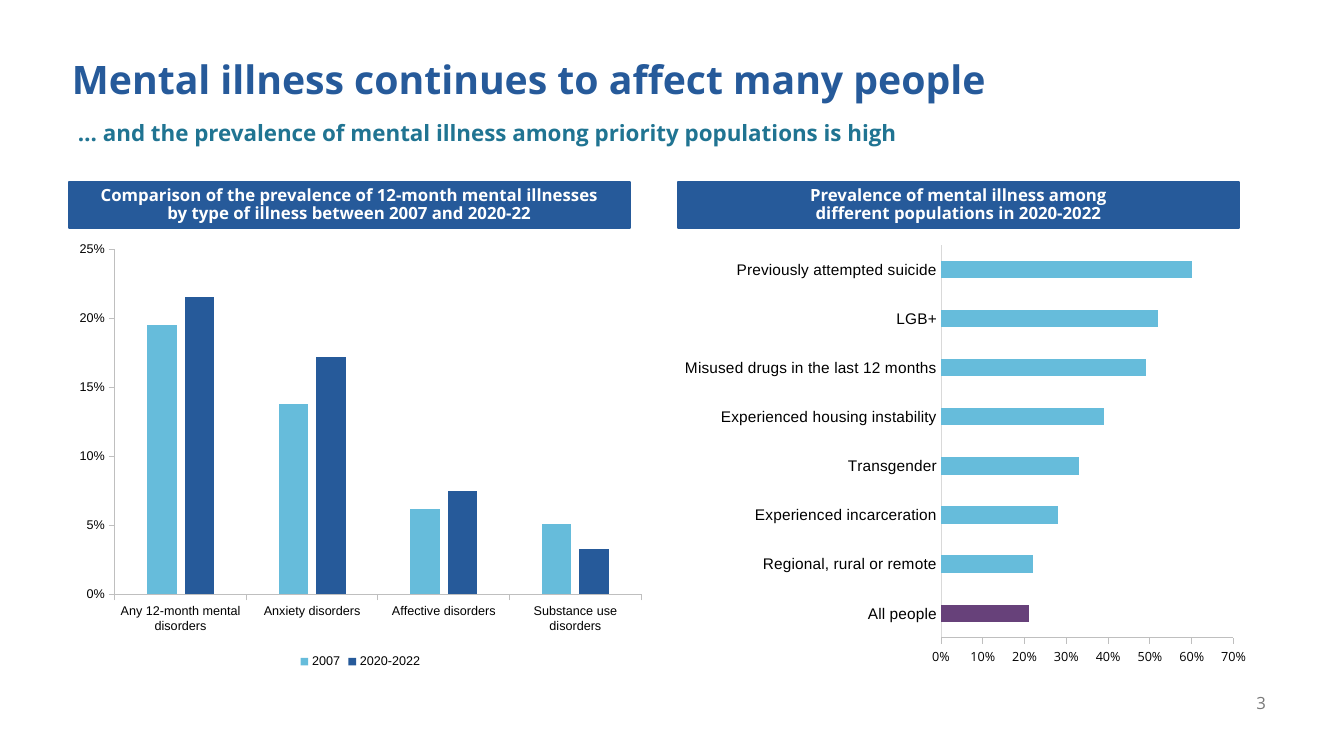
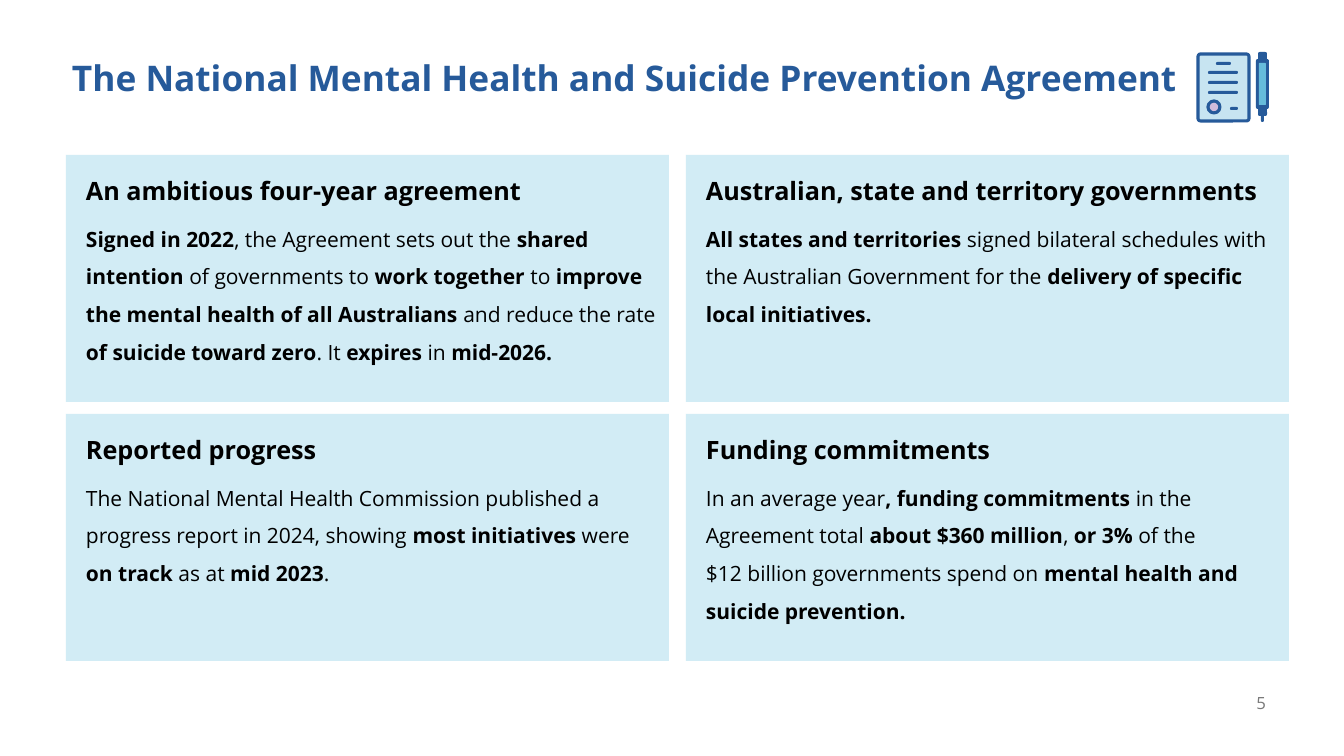
from pptx import Presentation
from pptx.chart.data import CategoryChartData
from pptx.dml.color import RGBColor
from pptx.enum.chart import XL_CHART_TYPE as ChartType, XL_LEGEND_POSITION as LegendPosition
from pptx.enum.chart import XL_TICK_MARK as TickMark
from pptx.enum.shapes import MSO_SHAPE as Preset
from pptx.enum.text import MSO_ANCHOR as Anchor, MSO_AUTO_SIZE as AutoSize, PP_ALIGN as Align
from pptx.oxml import parse_xml
from pptx.oxml.ns import nsdecls, qn
from pptx.util import Pt

EMU_PER_PX = 914400 / 100.8
FONT = "Open Sans"
CHART_FONT = "Arial"
BLUE = "265A9A"
TEAL = "207492"
SKY = "66BCDB"
PALE = "D2ECF5"
PURPLE = "67417A"
BLACK = "000000"
WHITE = "FFFFFF"
GREY = "797979"
AXIS_GREY = "BFBFBF"
PALE_GREY = "D9D9D9"
PAPER = "C7E4F1"
SEAL = "D0BBDB"
TITLE_BOX = (62, 56, 1222, 56)
SUBTITLE_BOX = (68, 117, 1222, 44)
NUMBER_BOX = (1199, 683, 77, 40)

CARDS = [
    ("An ambitious four-year agreement",
     "**Signed in 2022**, the Agreement sets out the **shared intention **of governments to "
     "**work together **to **improve the mental health of all Australians **and reduce the rate "
     "**of suicide toward zero**. It **expires** in **mid-2026.**"),
    ("Australian, state and territory governments",
     "**All states and territories **signed bilateral schedules with the Australian Government "
     "for the **delivery of specific local initiatives.**"),
    ("Reported progress",
     "The National Mental Health Commission published a progress report in 2024, showing "
     "**most initiatives **were **on track **as at **mid 2023**."),
    ("Funding commitments",
     "In an average year**, funding commitments **in the Agreement total **about $360 million**, "
     "**or 3% **of the\n$12 billion governments spend on "
     "**mental health and suicide prevention.**"),
]


def px(length):
    return round(length * EMU_PER_PX)


def color(value):
    return RGBColor.from_string(value)


def place(shape, box):
    shape.left, shape.top, shape.width, shape.height = map(px, box)


def style_font(font, size, fill, name=FONT, bold=False):
    font.name, font.size, font.bold = name, Pt(size), bold
    font.color.rgb = color(fill)


def write(paragraph, text, size=12, fill=BLACK, bold=False, align=Align.LEFT,
          line_spacing=None, space_after=0):
    paragraph.alignment = align
    paragraph.line_spacing = line_spacing
    paragraph.space_before = Pt(0)
    paragraph.space_after = Pt(space_after)
    for index, part in enumerate(text.split("**")):
        for line_index, line in enumerate(part.split("\n")):
            if line_index:
                paragraph.add_line_break()
            if line:
                run = paragraph.add_run()
                run.text = line
                style_font(run.font, size, fill, bold=bold or index % 2 == 1)


def set_frame(shape, anchor=Anchor.TOP, insets=(10, 5, 10, 5)):
    frame = shape.text_frame
    frame.word_wrap = True
    frame.auto_size = AutoSize.NONE
    frame.vertical_anchor = anchor
    frame.margin_left, frame.margin_top, frame.margin_right, frame.margin_bottom = map(px, insets)
    return frame


def add_block(shapes, box, fill, preset=Preset.RECTANGLE, line=None, line_width=1.5, radius=None):
    shape = shapes.add_shape(preset, *map(px, box))
    shape.shadow.inherit = False
    shape.fill.solid()
    shape.fill.fore_color.rgb = color(fill)
    if line:
        shape.line.color.rgb = color(line)
        shape.line.width = Pt(line_width)
    else:
        shape.line.fill.background()
    if radius is not None:
        shape.adjustments[0] = radius
    return shape


def fill_placeholder(placeholder, box, text, size, fill):
    place(placeholder, box)
    frame = set_frame(placeholder)
    write(frame.paragraphs[0], text, size=size, fill=fill, bold=True, line_spacing=0.9)


def start_slide(presentation, layout, title, title_size, number):
    slide = presentation.slides.add_slide(presentation.slide_layouts[layout])
    fill_placeholder(slide.shapes.title, TITLE_BOX, title, title_size, BLUE)
    number_box = slide.shapes.add_textbox(*map(px, NUMBER_BOX))
    frame = set_frame(number_box, Anchor.MIDDLE)
    write(frame.paragraphs[0], number, fill=GREY, align=Align.RIGHT)
    return slide


def add_band(slide, box, text):
    band = add_block(slide.shapes, box, BLUE, line=BLUE)
    frame = set_frame(band, Anchor.MIDDLE, (10, 0, 10, 0))
    write(frame.paragraphs[0], text, fill=WHITE, bold=True, align=Align.CENTER, line_spacing=0.9)


def style_axis(axis, size, name, line, tick):
    axis.has_major_gridlines = False
    axis.major_tick_mark = tick
    axis.minor_tick_mark = TickMark.NONE
    style_font(axis.tick_labels.font, size, BLACK, name)
    axis.format.line.color.rgb = color(line)
    axis.format.line.width = Pt(0.75)


def set_plot_area(chart, x, y, w, h):
    plot_area = chart.element.find(".//" + qn("c:plotArea"))
    layout = plot_area.find(qn("c:layout"))
    if layout is not None:
        plot_area.remove(layout)
    sizes = "".join(f'<c:{key} val="{value}"/>' for key, value in
                    (("x", x), ("y", y), ("w", w), ("h", h)))
    plot_area.insert(0, parse_xml(
        f'<c:layout {nsdecls("c")}><c:manualLayout><c:layoutTarget val="inner"/>'
        f'<c:xMode val="edge"/><c:yMode val="edge"/>{sizes}</c:manualLayout></c:layout>'))


def add_bar_chart(slide, box, kind, categories, series, maximum, step, gap, plot_box,
                  value_font=CHART_FONT, category_size=9, category_line=AXIS_GREY,
                  category_tick=TickMark.OUTSIDE):
    data = CategoryChartData(number_format="0%")
    data.categories = categories
    for name, values, _ in series:
        data.add_series(name, values)
    chart = slide.shapes.add_chart(kind, *map(px, box), data).chart
    style_font(chart.font, 9, BLACK, value_font)
    chart.has_title = False
    chart.has_legend = False
    style_axis(chart.category_axis, category_size, CHART_FONT, category_line, category_tick)
    value_axis = chart.value_axis
    style_axis(value_axis, 9, value_font, AXIS_GREY, TickMark.OUTSIDE)
    value_axis.minimum_scale, value_axis.maximum_scale, value_axis.major_unit = 0, maximum, step
    value_axis.tick_labels.number_format = "0%"
    value_axis.tick_labels.number_format_is_linked = False
    plot = chart.plots[0]
    plot.gap_width = gap
    plot.vary_by_categories = False
    for drawn, (_, _, fill) in zip(plot.series, series):
        drawn.format.fill.solid()
        drawn.format.fill.fore_color.rgb = color(fill)
    set_plot_area(chart, *plot_box)
    return chart


def add_illness_chart(slide, box):
    chart = add_bar_chart(
        slide, box, ChartType.COLUMN_CLUSTERED,
        ["Any 12-month mental disorders", "Anxiety disorders", "Affective disorders",
         "Substance use disorders"],
        [("2007", (0.195, 0.138, 0.062, 0.051), SKY),
         ("2020-2022", (0.215, 0.172, 0.075, 0.033), BLUE)],
        maximum=0.25, step=0.05, gap=219, plot_box=(0.08, 0.03, 0.9, 0.79))
    chart.plots[0].overlap = -27
    chart.has_legend = True
    chart.legend.position = LegendPosition.BOTTOM
    chart.legend.include_in_layout = False
    style_font(chart.legend.font, 9, BLACK, CHART_FONT)


def add_population_chart(slide, box):
    chart = add_bar_chart(
        slide, box, ChartType.BAR_CLUSTERED,
        ["All people", "Regional, rural or remote", "Experienced incarceration", "Transgender",
         "Experienced housing instability", "Misused drugs in the last 12 months", "LGB+",
         "Previously attempted suicide"],
        [("Series 1", (0.21, 0.22, 0.28, 0.33, 0.39, 0.49, 0.52, 0.6), SKY)],
        maximum=0.7, step=0.1, gap=182, plot_box=(0.46, 0.02, 0.5, 0.9),
        value_font=FONT, category_size=11, category_line=PALE_GREY, category_tick=TickMark.NONE)
    all_people = chart.plots[0].series[0].points[0].format.fill
    all_people.solid()
    all_people.fore_color.rgb = color(PURPLE)


def add_agreement_icon(slide, left, top):
    shapes = slide.shapes.add_group_shape().shapes

    def part(x, y, width, height, fill=BLUE, preset=Preset.ROUNDED_RECTANGLE, radius=0.5, **line):
        add_block(shapes, (left + x, top + y, width, height), fill, preset, radius=radius, **line)

    part(2, 2, 51, 67, PAPER, radius=0.05, line=BLUE, line_width=2.25)
    part(20, 10, 15, 3)
    for row in range(3):
        part(12, 19 + 10 * row, 30, 3)
    part(34, 55, 8, 3)
    part(12, 49, 12, 12, SEAL, Preset.OVAL, radius=None, line=BLUE, line_width=2.25)
    part(62, 0, 9, 11, radius=0.2)
    part(60, 7, 13, 50, radius=0.15)
    part(62, 53, 9, 11, radius=0.2)
    part(65, 60, 3, 10)
    part(63, 11, 7, 42, SKY, radius=0.1)


def add_card(slide, box, heading, body):
    card = add_block(slide.shapes, box, PALE)
    frame = set_frame(card, insets=(20, 20, 10, 5))
    write(frame.paragraphs[0], heading, size=18, bold=True, space_after=6)
    write(frame.add_paragraph(), body, size=15, line_spacing=Pt(26.9), space_after=16)


def build_prevalence_slide(presentation):
    slide = start_slide(presentation, 0, "Mental illness continues to affect many people", 28, "3")
    fill_placeholder(
        slide.placeholders[1], SUBTITLE_BOX,
        "… and the prevalence of mental illness among priority populations is high", 16, TEAL)
    add_population_chart(slide, (672, 236, 585, 437))
    add_illness_chart(slide, (68, 236, 585, 437))
    add_band(slide, (69, 182, 561, 46),
             "Comparison of the prevalence of 12-month mental illnesses\n"
             "by type of illness between 2007 and 2020-22")
    add_band(slide, (678, 182, 561, 46),
             "Prevalence of mental illness among\ndifferent populations in 2020-2022")


def build_agreement_slide(presentation):
    slide = start_slide(presentation, 5,
                        "The National Mental Health and Suicide Prevention Agreement", 25.2, "5")
    add_agreement_icon(slide, 1196, 52)
    for index, (heading, body) in enumerate(CARDS):
        row, column = divmod(index, 2)
        add_card(slide, (66 + 620 * column, 155 + 259 * row, 603, 247), heading, body)


def main():
    presentation = Presentation()
    presentation.slide_width, presentation.slide_height = px(1344), px(756)
    build_prevalence_slide(presentation)
    build_agreement_slide(presentation)
    presentation.save("out.pptx")


if __name__ == "__main__":
    main()
